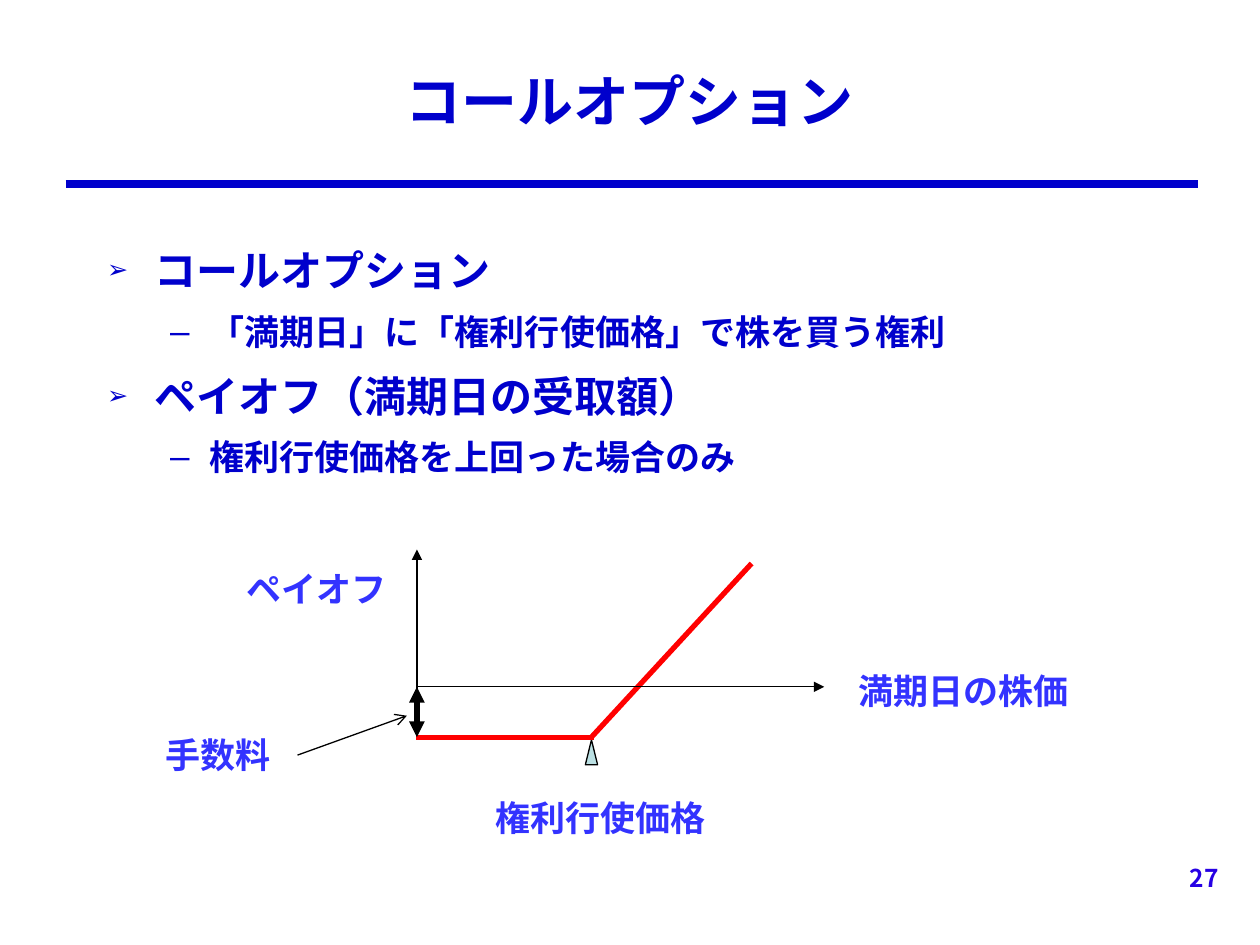
from dataclasses import dataclass
from lxml.etree import SubElement
from pptx import Presentation
from pptx.dml.color import RGBColor as RGB
from pptx.enum.shapes import MSO_CONNECTOR as Link, MSO_SHAPE as Shape
from pptx.enum.text import MSO_ANCHOR as Anchor, MSO_AUTO_SIZE as Fit, PP_ALIGN as Align
from pptx.oxml.ns import qn
from pptx.util import Pt


@dataclass(frozen=True)
class Theme:
    navy: RGB = RGB(0x00, 0x00, 0xCC)
    blue: RGB = RGB(0x33, 0x33, 0xFF)
    violet: RGB = RGB(0x26, 0x00, 0xE4)
    red: RGB = RGB(0xFF, 0x00, 0x00)
    black: RGB = RGB(0x00, 0x00, 0x00)
    pale: RGB = RGB(0xBB, 0xE0, 0xE3)
    gothic: str = "Noto Sans CJK JP"
    latin: str = "Arial"
    head: int = 32
    topic: int = 24
    point: int = 20
    label: int = 20
    page: int = 14
    thin: float = 0.75
    thick: float = 3
    rule: float = 4.5


THEME = Theme()


def style(para, size, color, name=THEME.gothic, align=Align.LEFT):
    para.alignment = align
    font = para.font
    font.size, font.bold, font.name = Pt(size), True, name
    font.color.rgb = color
    east = SubElement(para._p.pPr.find(qn("a:defRPr")), qn("a:ea"))
    east.set("typeface", THEME.gothic)


def space(para, percent):
    """Set the gap before a paragraph as a share of its line."""
    before = para._p.get_or_add_pPr()._add_spcBef()
    SubElement(before, qn("a:spcPct")).set("val", str(percent * 1000))


def place(shape, box):
    shape.left, shape.top, shape.width, shape.height = map(Pt, box)


def draw_line(slide, start, end, color, width, head=None, tail=None):
    line = slide.shapes.add_connector(Link.STRAIGHT, *map(Pt, (*start, *end)))
    line.line.color.rgb, line.line.width = color, Pt(width)
    stroke = line.line._get_or_add_ln()
    for tag, kind in (("a:headEnd", head), ("a:tailEnd", tail)):
        if kind:
            SubElement(stroke, qn(tag)).set("type", kind)
    SubElement(line._element.spPr, qn("a:effectLst"))
    return line


def add_text(slide, box, text, size, color, name, align):
    area = slide.shapes.add_textbox(*map(Pt, box))
    area.text_frame.word_wrap = True
    para = area.text_frame.paragraphs[0]
    para.text = text
    style(para, size, color, name, align)
    return area


def add_title(slide, box, text):
    title = slide.shapes.title
    place(title, box)
    frame = title.text_frame
    frame.text = text
    frame.auto_size, frame.vertical_anchor = Fit.NONE, Anchor.MIDDLE
    style(frame.paragraphs[0], THEME.head, THEME.navy, align=Align.CENTER)


def add_list(slide, box, items):
    body = slide.placeholders[1]
    place(body, box)
    frame = body.text_frame
    frame.text = "\n".join(text for _, text in items)
    frame.auto_size, frame.vertical_anchor = Fit.NONE, Anchor.TOP
    looks = (
        (THEME.topic, 27, 27, "➢", 60),
        (THEME.point, 58.5, 22.5, "–", 100),
    )
    for para, (level, _) in zip(frame.paragraphs, items):
        size, left, hang, mark, scale = looks[level]
        para.level, para.line_spacing = level, 1.15
        space(para, 25)
        props = para._p.pPr
        props.set("marL", str(Pt(left)))
        props.set("indent", str(-Pt(hang)))
        SubElement(props, qn("a:buSzPct")).set("val", str(scale * 1000))
        SubElement(props, qn("a:buChar")).set("char", mark)
        style(para, size, THEME.navy)


def add_payoff(slide, box):
    """Draw the payoff of a call against the share price."""
    left, top, width, height = box

    def at(x, y):
        return left + x, top + y

    def label(x, y, wide, text, align=Align.LEFT):
        area = add_text(slide, (*at(x, y), wide, 32), text,
                        THEME.label, THEME.blue, THEME.latin, align)
        space(area.text_frame.paragraphs[0], 50)
        return area

    zero, base, floor, strike = 159.25, 78.5, 107.25, 259
    label(35.5, 7, 133, "ペイオフ", Align.CENTER)
    label(197, height - 32, 140, "権利行使価格")
    label(width - 153, 65, 153, "満期日の株価")
    fee = label(0, 101.5, 91, "手数料", Align.CENTER)

    mark = slide.shapes.add_shape(
        Shape.ISOSCELES_TRIANGLE, *map(Pt, (*at(strike - 3.5, 108.75), 7, 14.25)))
    mark.shadow.inherit = False
    mark.fill.solid()
    mark.fill.fore_color.rgb = THEME.pale
    mark.line.color.rgb, mark.line.width = THEME.black, Pt(THEME.thin)

    thin, thick = (THEME.black, THEME.thin), (THEME.red, THEME.thick)
    draw_line(slide, at(strike, floor), at(350.5, 8), *thick)
    draw_line(slide, at(zero, base), at(392, base), *thin, tail="triangle")
    draw_line(slide, at(zero, floor), at(zero, 0), *thin, tail="triangle")
    draw_line(slide, at(zero - 0.5, floor), at(strike + 1.5, floor), *thick)
    pointer = draw_line(slide, at(91, 117.5), at(153.5, 95), *thin, tail="arrow")
    pointer.begin_connect(fee, 3)
    draw_line(slide, at(zero, base), at(zero, floor), THEME.black, THEME.thick,
              head="triangle", tail="triangle")


def main():
    deck = Presentation()
    deck.slide_width, deck.slide_height = Pt(720), Pt(540)
    slide = deck.slides.add_slide(deck.slide_layouts[1])
    draw_line(slide, (37.5, 105), (684.5, 105), THEME.navy, THEME.rule)
    add_text(slide, (651, 489.5, 52.5, 36), "27",
             THEME.page, THEME.violet, THEME.gothic, Align.RIGHT)
    add_title(slide, (54, 18, 612, 78), "コールオプション")
    add_list(slide, (54, 132, 612, 348), (
        (0, "コールオプション"),
        (1, "「満期日」に「権利行使価格」で株を買う権利"),
        (0, "ペイオフ（満期日の受取額）"),
        (1, "権利行使価格を上回った場合のみ"),
    ))
    add_payoff(slide, (79, 314, 557.5, 169.5))
    deck.save("out.pptx")


if __name__ == "__main__":
    main()
